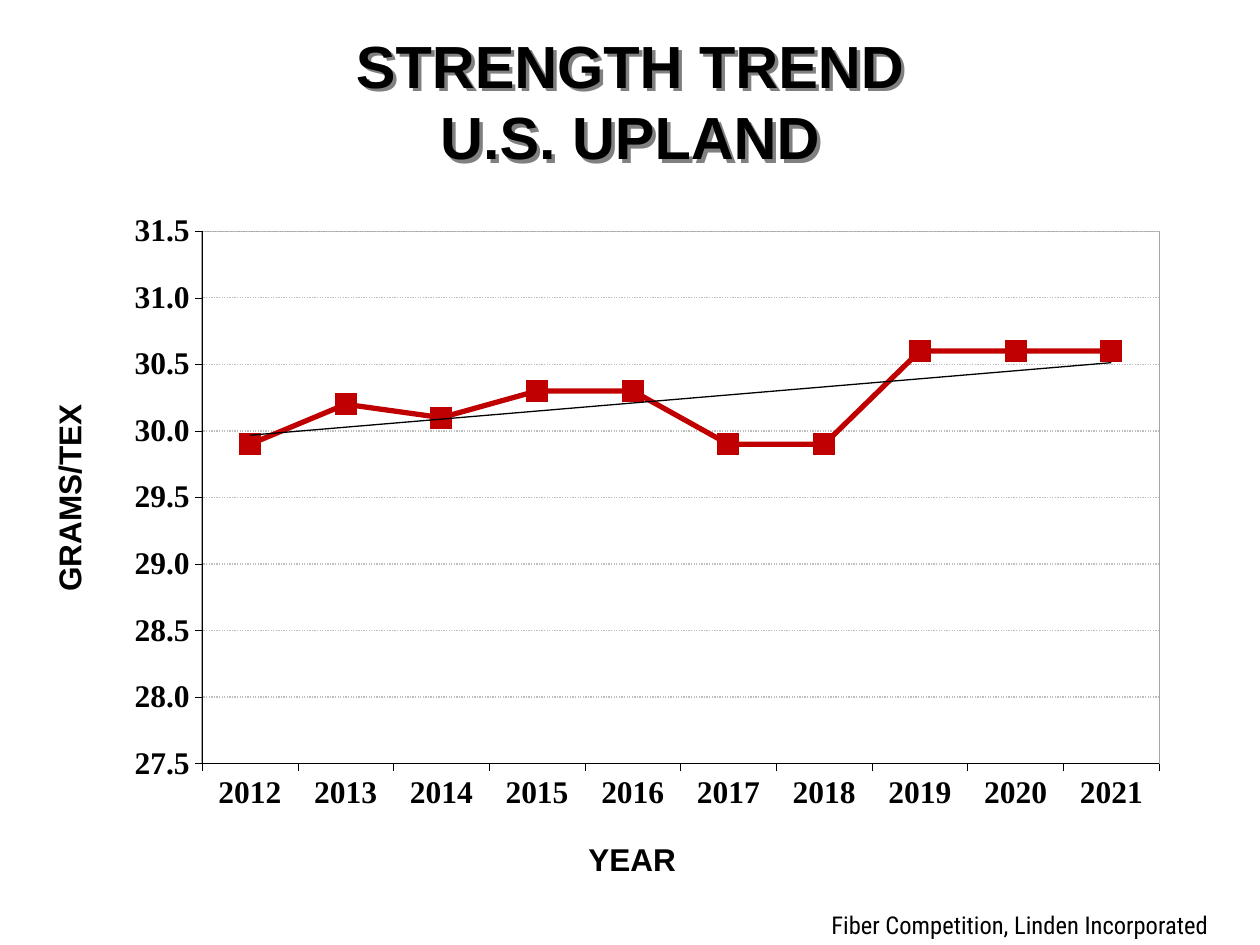
"""Build a slide with a fibre strength line chart and its linear trend."""
from dataclasses import dataclass

from lxml import etree
from pptx import Presentation
from pptx.chart.axis import CategoryAxis, ValueAxis
from pptx.chart.chart import Chart
from pptx.chart.data import CategoryChartData
from pptx.dml.color import RGBColor
from pptx.dml.line import LineFormat
from pptx.enum.chart import XL_CHART_TYPE, XL_MARKER_STYLE, XL_TICK_MARK
from pptx.enum.dml import MSO_LINE
from pptx.enum.text import MSO_ANCHOR, MSO_AUTO_SIZE, PP_ALIGN
from pptx.oxml import parse_xml
from pptx.oxml.ns import nsdecls, qn
from pptx.slide import Slide
from pptx.text.text import Font
from pptx.util import Length, Pt

LINE_MARKERS = XL_CHART_TYPE.LINE_MARKERS
SQUARE = XL_MARKER_STYLE.SQUARE
OUTSIDE = XL_TICK_MARK.OUTSIDE
DOTTED = MSO_LINE.ROUND_DOT
MIDDLE = MSO_ANCHOR.MIDDLE
GROW = MSO_AUTO_SIZE.SHAPE_TO_FIT_TEXT
CENTER = PP_ALIGN.CENTER


@dataclass(frozen=True)
class Theme:
    ink: str = "000000"
    series: str = "C00000"
    grid: str = "BFBFBF"
    frame: str = "A6A6A6"
    shadow: str = "808080"
    heading_font: str = "Arial"
    axis_font: str = "Times New Roman"
    credit_font: str = "Roboto Condensed"
    title_size: Length = Pt(34)
    title_leading: Length = Pt(41)
    label_size: Length = Pt(18)
    credit_size: Length = Pt(14)


@dataclass(frozen=True)
class Label:
    text: str
    left: float
    top: float
    width: float
    height: float
    font: str
    size: Length
    bold: bool = True
    rotation: float = 0
    tight: bool = True


THEME = Theme()
LABELS = [
    Label("GRAMS/TEX", -14.4, 273.6, 107.28, 21.6, THEME.heading_font, THEME.label_size, rotation=270),
    Label("YEAR", 336.24, 480.24, 54, 21.6, THEME.heading_font, THEME.label_size),
    Label("Fiber Competition, Linden Incorporated", 468, 516.24, 252, 23.76,
          THEME.credit_font, THEME.credit_size, bold=False, tight=False),
]
YEARS = [str(year) for year in range(2012, 2022)]
STRENGTHS = [29.9, 30.2, 30.1, 30.3, 30.3, 29.9, 29.9, 30.6, 30.6, 30.6]
PLOT_AREA = {"x": 0.141, "y": 0.221, "w": 0.803, "h": 0.616}


def style_font(font: Font, name: str, size: Length, bold: bool) -> None:
    """Set the face, size and weight of a font in the ink colour."""
    font.name, font.size, font.bold = name, size, bold
    font.color.rgb = RGBColor.from_string(THEME.ink)


def style_line(line: LineFormat, color: str, width: float) -> None:
    """Set the colour and width of a line."""
    line.color.rgb = RGBColor.from_string(color)
    line.width = Pt(width)


def add_title(slide: Slide) -> None:
    """Place the two-line shadowed title."""
    title = slide.shapes.title
    title.left, title.top, title.width, title.height = Pt(54), Pt(12.24), Pt(612), Pt(90)
    title.fill.background()
    title.text_frame.vertical_anchor = MIDDLE
    para = title.text_frame.paragraphs[0]
    para.text = "STRENGTH TREND\vU.S. UPLAND"
    para.alignment = CENTER
    para.line_spacing = THEME.title_leading
    style_font(para.font, THEME.heading_font, THEME.title_size, True)
    title._element.spPr.append(parse_xml(
        f'<a:effectLst {nsdecls("a")}><a:outerShdw dist="{Pt(2.83)}" dir="2700000" algn="ctr" '
        f'rotWithShape="0"><a:srgbClr val="{THEME.shadow}"/></a:outerShdw></a:effectLst>'))


def add_label(slide: Slide, label: Label) -> None:
    """Place one text label."""
    box = slide.shapes.add_textbox(Pt(label.left), Pt(label.top), Pt(label.width), Pt(label.height))
    box.rotation = label.rotation
    frame = box.text_frame
    frame.word_wrap = not label.tight
    if label.tight:
        frame.auto_size = GROW
        frame.margin_left = frame.margin_right = frame.margin_top = frame.margin_bottom = 0
    para = frame.paragraphs[0]
    para.text = label.text
    style_font(para.font, label.font, label.size, label.bold)


def style_axis(axis: CategoryAxis | ValueAxis) -> None:
    """Format the line, ticks and labels of an axis."""
    axis.major_tick_mark = OUTSIDE
    style_line(axis.format.line, THEME.ink, 0.25)
    style_font(axis.tick_labels.font, THEME.axis_font, THEME.label_size, True)


def lay_out_plot(chart: Chart) -> None:
    """Fix the inner plot area and give it a thin frame."""
    plot_area = chart._chartSpace.chart.plotArea
    for layout in plot_area.findall(qn("c:layout")):
        plot_area.remove(layout)
    modes = "".join(f'<c:{side}Mode val="edge"/>' for side in "xy")
    sizes = "".join(f'<c:{side} val="{share}"/>' for side, share in PLOT_AREA.items())
    plot_area.insert(0, parse_xml(
        f'<c:layout {nsdecls("c")}><c:manualLayout><c:layoutTarget val="inner"/>'
        f'{modes}{sizes}</c:manualLayout></c:layout>'))
    plot_area.append(parse_xml(
        f'<c:spPr {nsdecls("c", "a")}><a:noFill/><a:ln w="{Pt(0.75)}"><a:solidFill>'
        f'<a:srgbClr val="{THEME.frame}"/></a:solidFill></a:ln></c:spPr>'))


def add_trend(series_element: etree._Element) -> None:
    """Add a thin linear trend line to a series."""
    series_element.find(qn("c:cat")).addprevious(parse_xml(
        f'<c:trendline {nsdecls("c", "a")}><c:spPr><a:ln w="{Pt(0.75)}"><a:solidFill>'
        f'<a:srgbClr val="{THEME.ink}"/></a:solidFill></a:ln></c:spPr>'
        '<c:trendlineType val="linear"/><c:dispRSqr val="0"/><c:dispEq val="0"/></c:trendline>'))


def add_strength_chart(slide: Slide) -> None:
    """Place the line chart of strength by year."""
    data = CategoryChartData(number_format="0.0")
    data.categories = YEARS
    data.add_series("Series 1", STRENGTHS)
    chart = slide.shapes.add_chart(
        LINE_MARKERS, Pt(19.44), Pt(23.04), Pt(681.12), Pt(493.92), data).chart
    chart.has_title = chart.has_legend = False
    style_font(chart.font, THEME.axis_font, Pt(10), False)
    chart.plots[0].vary_by_categories = False

    values = chart.value_axis
    for axis in (chart.category_axis, values):
        style_axis(axis)
    values.minimum_scale, values.maximum_scale, values.major_unit = 27.5, 31.5, 0.5
    values.tick_labels.number_format = "0.0"
    values.tick_labels.number_format_is_linked = False
    grid = values.major_gridlines.format.line
    style_line(grid, THEME.grid, 0.75)
    grid.dash_style = DOTTED

    series = chart.plots[0].series[0]
    series.smooth = False
    style_line(series.format.line, THEME.series, 3)
    marker = series.marker
    marker.style, marker.size = SQUARE, 12
    marker.format.fill.solid()
    marker.format.fill.fore_color.rgb = RGBColor.from_string(THEME.series)
    style_line(marker.format.line, THEME.series, 0.75)
    add_trend(series._element)
    lay_out_plot(chart)


def main() -> None:
    """Build and save the deck."""
    deck = Presentation()
    deck.slide_width, deck.slide_height = Pt(720), Pt(540)
    page = deck.slides.add_slide(deck.slide_layouts[5])
    add_title(page)
    for label in LABELS:
        add_label(page, label)
    add_strength_chart(page)
    deck.save("out.pptx")


if __name__ == "__main__":
    main()
